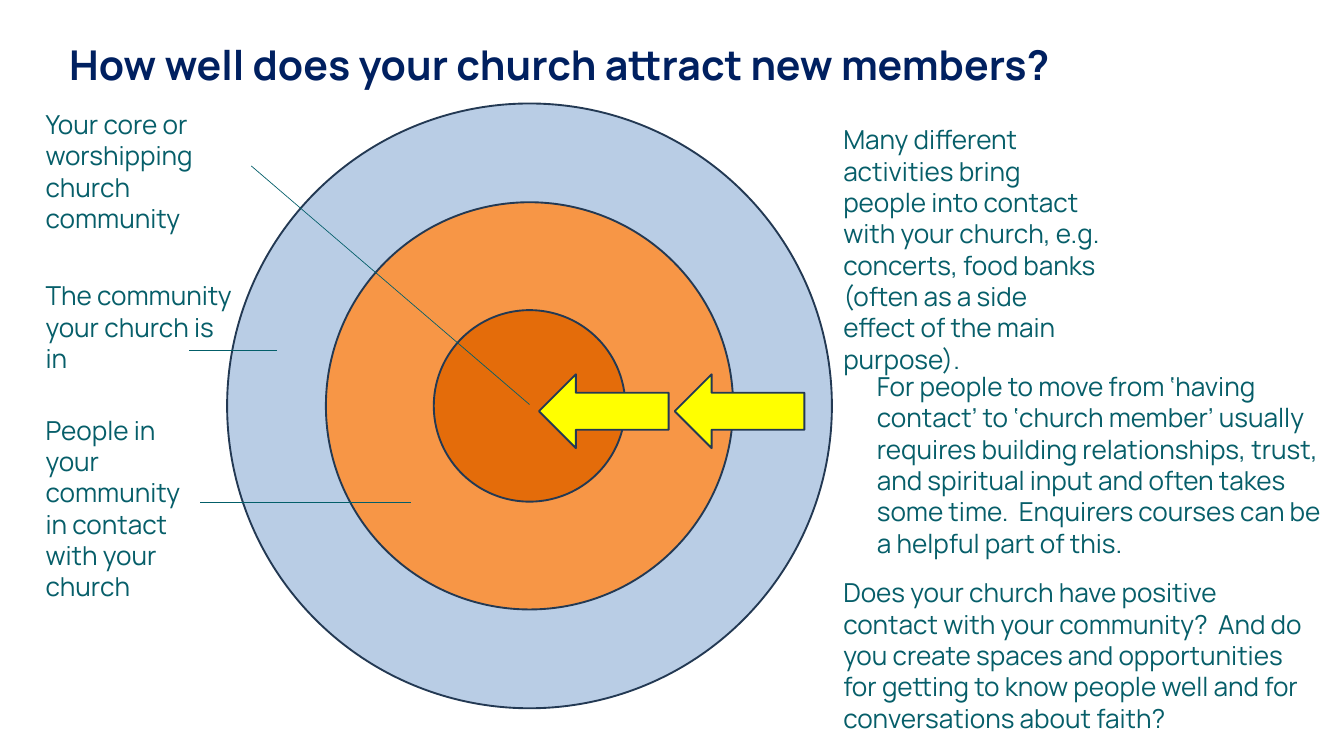
"""Build a slide of concentric circles on how a church attracts new members."""
import pptx
import pptx.util
import pptx.dml.color
import pptx.enum.shapes
import pptx.enum.text
import pptx.oxml

Inches = pptx.util.Inches
Pt = pptx.util.Pt
RGBColor = pptx.dml.color.RGBColor
Shape = pptx.enum.shapes.MSO_SHAPE

NAVY = RGBColor(0x00, 0x20, 0x60)
TEAL = RGBColor(0x06, 0x5E, 0x69)
LINE_TEAL = RGBColor(0x03, 0x5E, 0x69)
OUTLINE = RGBColor(0x23, 0x39, 0x53)
PALE_BLUE = RGBColor(0xB9, 0xCD, 0xE5)
ORANGE = RGBColor(0xF7, 0x96, 0x46)
DARK_ORANGE = RGBColor(0xE4, 0x6C, 0x0A)
YELLOW = RGBColor(0xFF, 0xFF, 0x00)

deck = pptx.Presentation()
deck.slide_width = Inches(20)
deck.slide_height = Inches(11.25)
page = deck.slides.add_slide(deck.slide_layouts[6])


def add_outlined(kind, left, top, width, height, fill):
    shape = page.shapes.add_shape(kind, Inches(left), Inches(top), Inches(width), Inches(height))
    shape.shadow.inherit = False
    shape.fill.solid()
    shape.fill.fore_color.rgb = fill
    shape.line.color.rgb = OUTLINE
    shape.line.width = Pt(2)


def add_text(text, left, top, width, height, size=28, color=TEAL):
    box = page.shapes.add_textbox(Inches(left), Inches(top), Inches(width), Inches(height))
    frame = box.text_frame
    frame.word_wrap = True
    frame.auto_size = pptx.enum.text.MSO_AUTO_SIZE.SHAPE_TO_FIT_TEXT
    frame.text = text
    para = frame.paragraphs[0]
    span = para.runs[0]
    span.font.name = "Manrope"
    span.font.size = Pt(size)
    span.font.color.rgb = color
    return para


center_x, center_y = 7.88, 6.04
for diameter, fill in [(9, PALE_BLUE), (6.06, ORANGE), (2.85, DARK_ORANGE)]:
    add_outlined(Shape.OVAL, center_x - diameter / 2, center_y - diameter / 2,
                 diameter, diameter, fill)

title = add_text("How well does your church attract new members?", 0.83, 0.54, 15, 0.84, 44, NAVY)
title.alignment = pptx.enum.text.PP_ALIGN.CENTER
title.runs[0].font.bold = True

for left in (10.04, 8.02):
    add_outlined(Shape.LEFT_ARROW, left, 5.57, 1.93, 1.1, YELLOW)

ring_labels = [
    ("Your core or worshipping church community", 1.56, 3.23, 1.99),
    ("The community your church is in", 4.11, 3.07, 1.51),
    ("People in your community in contact with your church", 6.11, 2.57, 2.93),
]
for text, top, width, height in ring_labels:
    add_text(text, 0.58, top, width, height)

leaders = [(3.74, 2.47, 7.88, 6.02), (2.82, 5.21, 4.12, 5.21), (2.98, 7.47, 6.12, 7.47)]
for ends in leaders:
    leader = page.shapes.add_connector(pptx.enum.shapes.MSO_CONNECTOR.STRAIGHT,
                                       *[Inches(value) for value in ends])
    leader.line.color.rgb = LINE_TEAL
    leader.line.width = Pt(0.75)
    leader._element.spPr.append(pptx.oxml.parse_xml(
        '<a:effectLst xmlns:a="http://schemas.openxmlformats.org/drawingml/2006/main"/>'))

comments = [
    ("Many different activities bring people into contact with your church, e.g. concerts, "
     "food banks (often as a side effect of the main purpose).", 12.45, 1.79, 4.05, 3.4),
    ("For people to move from ‘having contact’ to ‘church member’ usually requires building "
     "relationships, trust, and spiritual input and often takes some time.  Enquirers courses "
     "can be a helpful part of this.", 12.95, 5.46, 6.95, 2.93),
    ("Does your church have positive contact with your community?  And do you create spaces "
     "and opportunities for getting to know people well and for conversations about faith?",
     12.45, 8.53, 7.22, 2.46),
]
for comment in comments:
    add_text(*comment)

deck.save("out.pptx")
